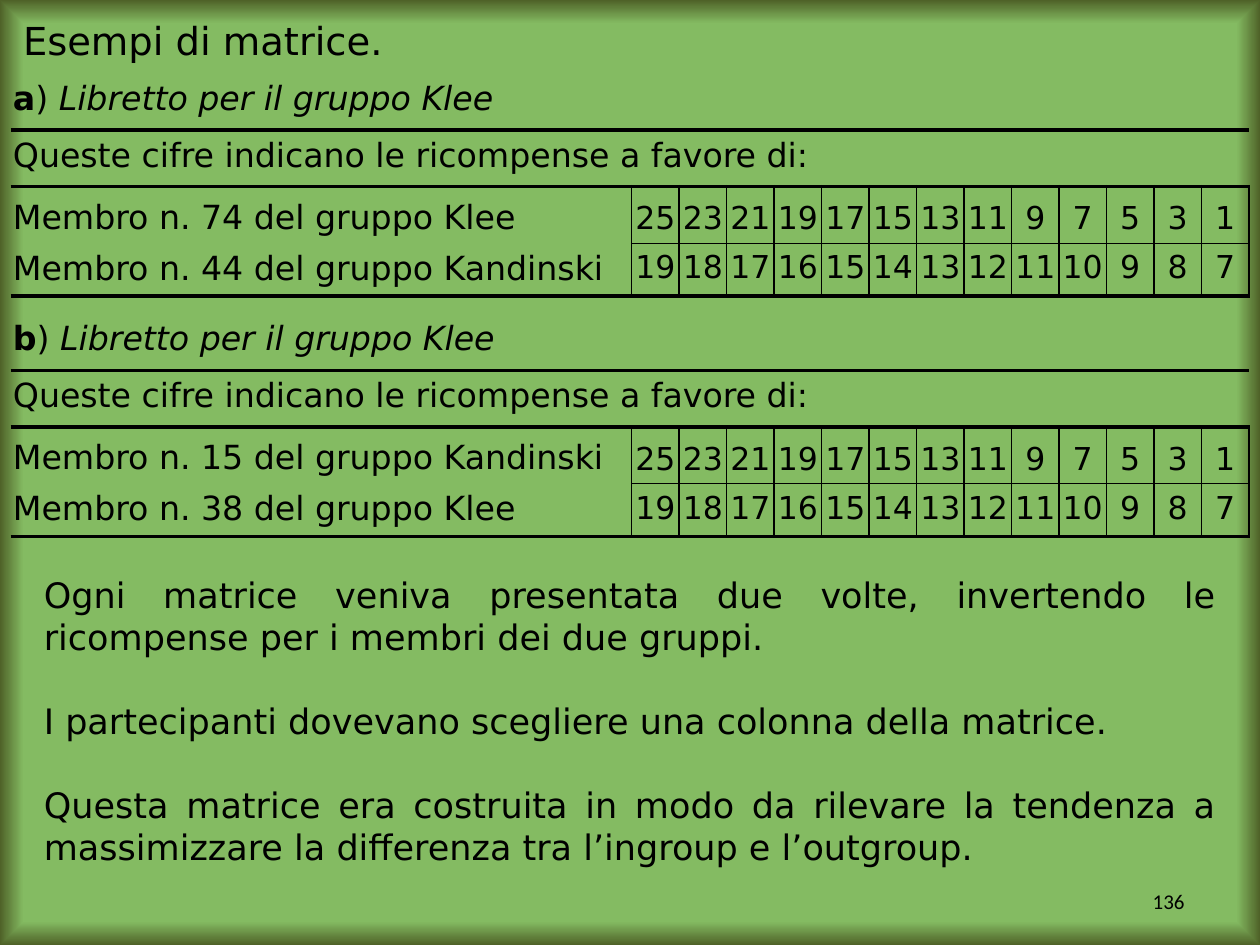
from dataclasses import dataclass

from pptx import Presentation
from pptx.dml.color import RGBColor
from pptx.enum.text import MSO_ANCHOR, PP_ALIGN
from pptx.oxml.ns import qn
from pptx.util import Pt
from lxml.etree import SubElement


@dataclass(frozen=True)
class Theme:
    ink: RGBColor = RGBColor(0, 0, 0)
    green: RGBColor = RGBColor(0x84, 0xBB, 0x62)
    edge: RGBColor = RGBColor(0x4F, 0x62, 0x28)
    font: str = "DejaVu Sans"
    page_font: str = "Calibri"
    title: float = 22
    body: float = 20
    label: float = 19
    value: float = 18
    page: float = 12
    thick: float = 2.25
    thin: float = 1


THEME = Theme()
PLAIN_STYLE = "{2D5ABB26-0587-4C30-8999-92F81FD0307C}"
NOTE = "Queste cifre indicano le ricompense a favore di:"
TOP_PAY = range(25, 0, -2)
LOW_PAY = range(19, 6, -1)
LABEL_W, TABLE_W = 355, 708
ROWS = (32.4, 32.4, 32.4, 29.5)
MATRICES = (
    (41.8, (("a", "b"), (") ", ""), ("Libretto per il gruppo Klee", "i")),
     "Membro n. 74 del gruppo Klee", "Membro n. 44 del gruppo Kandinski"),
    (179.2, (("b", "b"), (")", ""), (" Libretto per il gruppo Klee", "i")),
     "Membro n. 15 del gruppo Kandinski", "Membro n. 38 del gruppo Klee"),
)
BODY = (
    "Ogni matrice veniva presentata due volte, invertendo le ricompense "
    "per i membri dei due gruppi. ",
    "I partecipanti dovevano scegliere una colonna della matrice.",
    "Questa matrice era costruita in modo da rilevare la tendenza a "
    "massimizzare la differenza tra l’ingroup e l’outgroup.",
)


def add_run(para, text, size, font=THEME.font, style=""):
    run = para.add_run()
    run.text = text
    run.font.size = Pt(size)
    run.font.name = font
    run.font.color.rgb = THEME.ink
    run.font.bold = "b" in style
    run.font.italic = "i" in style


def place(shape, left, top, width, height):
    shape.left, shape.top = Pt(left), Pt(top)
    shape.width, shape.height = Pt(width), Pt(height)


def paint_back(slide):
    """Green field that darkens only at the rim of the slide."""
    fill = slide.background.fill
    fill.gradient()
    stops = zip(fill.gradient_stops, (0.95, 1), (THEME.green, THEME.edge))
    for stop, pos, color in stops:
        stop.position = pos
        stop.color.rgb = color
    grad = slide.element.find(".//" + qn("a:gradFill"))
    grad.remove(grad.find(qn("a:lin")))
    way = SubElement(grad, qn("a:path"), {"path": "shape"})
    SubElement(way, qn("a:fillToRect"), dict.fromkeys("ltrb", "50000"))


def add_title(slide, text):
    title = slide.shapes.title
    place(title, 6, 6, 684, 30)
    frame = title.text_frame
    frame.vertical_anchor = MSO_ANCHOR.TOP
    para = frame.paragraphs[0]
    para.alignment = PP_ALIGN.JUSTIFY
    add_run(para, text, THEME.title)


def add_box(slide, box, texts, size, font, align, anchor, gap=0):
    shape = slide.shapes.add_textbox(0, 0, 0, 0)
    place(shape, *box)
    frame = shape.text_frame
    frame.word_wrap = True
    frame.vertical_anchor = anchor
    for i, text in enumerate(texts):
        para = frame.add_paragraph() if i else frame.paragraphs[0]
        para.alignment = align
        para.space_before = Pt(gap if i else 0)
        add_run(para, text, size, font)


def fill_cell(cell, runs, size, align=PP_ALIGN.LEFT, anchor=MSO_ANCHOR.TOP):
    cell.vertical_anchor = anchor
    para = cell.text_frame.paragraphs[0]
    para.alignment = align
    space = SubElement(para._p.get_or_add_pPr(), qn("a:spcBef"))
    SubElement(space, qn("a:spcPct"), val="20000")
    for text, style in runs:
        add_run(para, text, size, style=style)


def rule_cell(cell, **sides):
    """Draw borders; each side (L, R, T, B) is given its width."""
    props = cell._tc.get_or_add_tcPr()
    for side in "LRTB":
        if side in sides:
            line = SubElement(props, qn("a:ln" + side),
                              w=str(Pt(sides[side])))
            solid = SubElement(line, qn("a:solidFill"))
            SubElement(solid, qn("a:srgbClr"), val=str(THEME.ink))


def add_pay(table, row, label, values, anchor, **sides):
    """Fill a row with a member's label and the rewards."""
    head = table.cell(row, 0)
    fill_cell(head, [(label, "")], THEME.label, anchor=anchor)
    base = {"B": THEME.thick} if row == 3 else {}
    rule_cell(head, R=THEME.thin, **base)
    for col, value in enumerate(values, 1):
        cell = table.cell(row, col)
        fill_cell(cell, [(str(value), "")], THEME.value,
                  PP_ALIGN.CENTER, anchor)
        rule_cell(cell, L=THEME.thin, R=THEME.thin, **sides)


def add_matrix(slide, top, head, upper, lower):
    count = len(TOP_PAY)
    frame = slide.shapes.add_table(len(ROWS), count + 1, Pt(6), Pt(top),
                                   Pt(TABLE_W), Pt(sum(ROWS)))
    table = frame.table
    table.first_row = table.horz_banding = False
    table._tbl.tblPr.find(qn("a:tableStyleId")).text = PLAIN_STYLE
    for i, col in enumerate(table.columns):
        col.width = Pt((TABLE_W - LABEL_W) / count if i else LABEL_W)
    for row, height in zip(table.rows, ROWS):
        row.height = Pt(height)
    for cell in table.iter_cells():
        cell.margin_left = cell.margin_right = Pt(1.4)
        cell.margin_top = cell.margin_bottom = Pt(3.6)

    fill_cell(table.cell(0, 0), head, THEME.label)
    for col in range(count + 1):
        rule_cell(table.cell(0, col), B=THEME.thick)
        rule_cell(table.cell(1, col), T=THEME.thick)
    note = table.cell(1, 0)
    note.merge(table.cell(1, count))
    fill_cell(note, [(NOTE, "")], THEME.label)
    add_pay(table, 2, upper, TOP_PAY, MSO_ANCHOR.BOTTOM, B=THEME.thin)
    add_pay(table, 3, lower, LOW_PAY, MSO_ANCHOR.TOP,
            T=THEME.thin, B=THEME.thick)
    for cell in table.iter_cells():
        cell.fill.background()


def main():
    deck = Presentation()
    deck.slide_width, deck.slide_height = Pt(720), Pt(540)
    slide = deck.slides.add_slide(deck.slide_layouts[5])
    paint_back(slide)
    add_box(slide, (516, 500.5, 168, 28.8), ["136"], THEME.page,
            THEME.page_font, PP_ALIGN.RIGHT, MSO_ANCHOR.MIDDLE)
    add_title(slide, "Esempi di matrice.")
    for matrix in MATRICES:
        add_matrix(slide, *matrix)
    add_box(slide, (18, 324, 684, 204), BODY, THEME.body, THEME.font,
            PP_ALIGN.JUSTIFY, MSO_ANCHOR.TOP, gap=24)
    deck.save("out.pptx")


if __name__ == "__main__":
    main()
